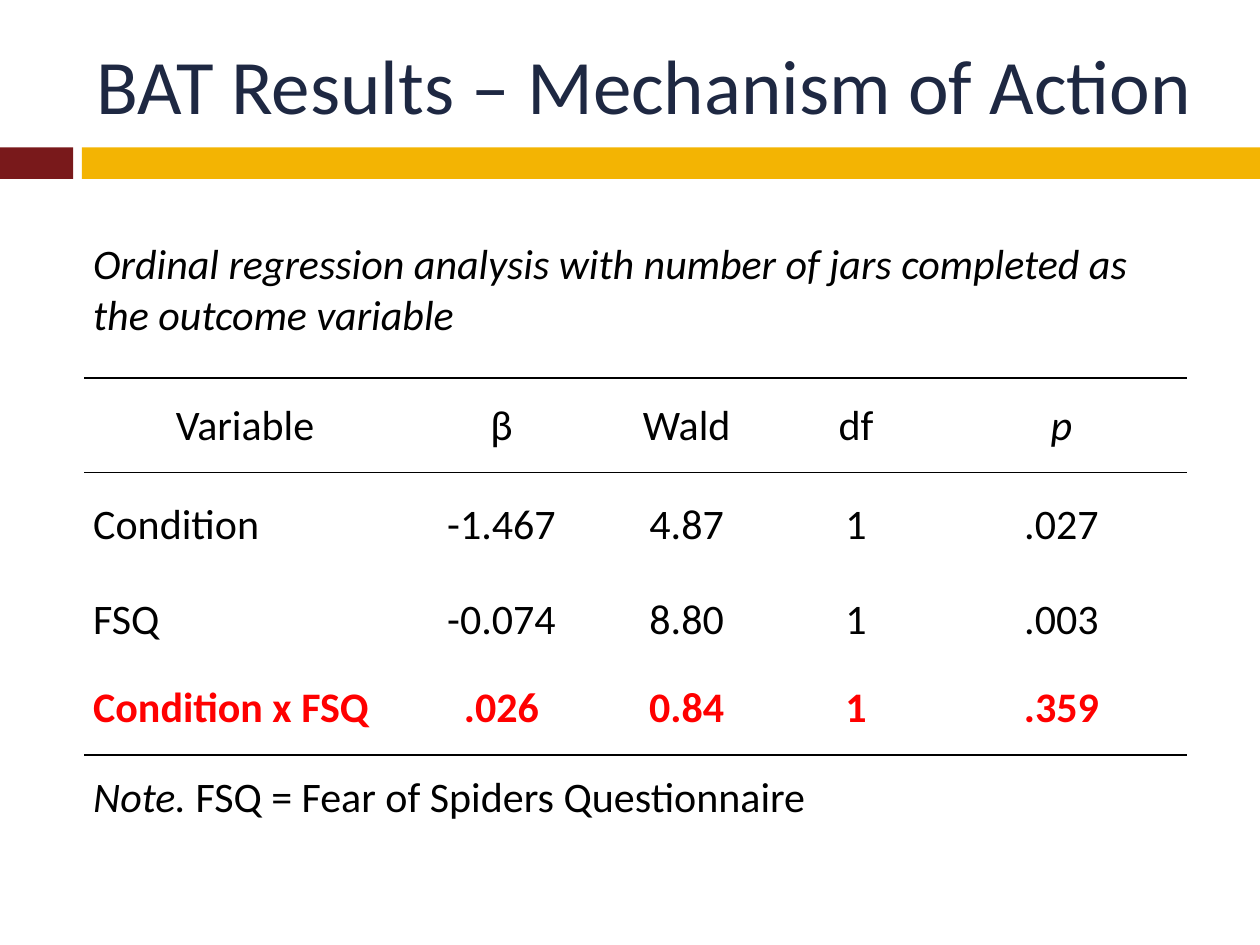
from lxml import etree
from pptx import Presentation
from pptx.dml.color import RGBColor
from pptx.enum.shapes import MSO_SHAPE
from pptx.enum.text import MSO_ANCHOR, PP_ALIGN
from pptx.oxml.ns import qn
from pptx.util import Inches, Pt

RECTANGLE = MSO_SHAPE.RECTANGLE
TOP, MIDDLE, BOTTOM = MSO_ANCHOR.TOP, MSO_ANCHOR.MIDDLE, MSO_ANCHOR.BOTTOM
LEFT, CENTER = PP_ALIGN.LEFT, PP_ALIGN.CENTER

NAVY = RGBColor(0x1E, 0x28, 0x42)
MAROON = RGBColor(0x79, 0x19, 0x1B)
GOLD = RGBColor(0xF3, 0xB4, 0x03)
BLACK = RGBColor(0, 0, 0)
RED = RGBColor(0xFF, 0, 0)
FONT = "Calibri"

COLUMNS = [2.55, 1.52, 1.42, 1.27, 1.99]
ROWS = [1.11, 0.75, 0.83, 0.67, 0.74, 0.55]
CAPTION_ROW, HEADER_ROW, RESULT_ROW, NOTE_ROW = 0, 1, 4, 5
RULES = {1: 1.25, 2: 0.75, 5: 1.25}  # line weight above each ruled row
MARGIN = 0.67

CONTENT = [
    ["Ordinal regression analysis with number of jars completed as the outcome variable"],
    ["Variable", "β", "Wald", "df", "p"],
    ["Condition", "-1.467", "4.87", "1", ".027"],
    ["FSQ", "-0.074", "8.80", "1", ".003"],
    ["Condition x FSQ", ".026", "0.84", "1", ".359"],
    ["Note. "],
]


def add_border(cell, side, weight):
    """Draw one cell edge in black, or leave it clear when weight is None."""
    line = etree.SubElement(cell._tc.get_or_add_tcPr(), qn(f"a:ln{side}"))
    if weight is None:
        etree.SubElement(line, qn("a:noFill"))
        return
    line.set("w", str(Pt(weight)))
    fill = etree.SubElement(line, qn("a:solidFill"))
    etree.SubElement(fill, qn("a:srgbClr")).set("val", str(BLACK))


prs = Presentation()
prs.slide_width, prs.slide_height = Inches(10), Inches(7.5)
slide = prs.slides.add_slide(prs.slide_layouts[6])

# Two-colour band under the title
for left, width, color in [(0, 0.58, MAROON), (0.65, 9.35, GOLD)]:
    band = slide.shapes.add_shape(
        RECTANGLE, Inches(left), Inches(1.17), Inches(width), Inches(0.25))
    band.shadow.inherit = False
    band.fill.solid()
    band.fill.fore_color.rgb = color
    band.line.fill.background()

# Title
title = slide.shapes.add_textbox(
    Inches(MARGIN), Inches(0.25), Inches(8.92), Inches(0.83)).text_frame
title.word_wrap = True
title.vertical_anchor = MIDDLE
heading = title.paragraphs[0]
heading.text = "BAT Results – Mechanism of Action"
heading.font.name, heading.font.size = FONT, Pt(44)
heading.font.color.rgb = NAVY

# Regression table without a banded style
table = slide.shapes.add_table(
    len(ROWS), len(COLUMNS), Inches(MARGIN), Inches(1.89),
    Inches(sum(COLUMNS)), Inches(sum(ROWS))).table
table.first_row = table.horz_banding = False
table._tbl.tblPr.find(qn("a:tableStyleId")).text = "{2D5ABB26-0587-4C30-8999-92F81FD0307C}"
for column, width in zip(table.columns, COLUMNS):
    column.width = Inches(width)
for row, height in zip(table.rows, ROWS):
    row.height = Inches(height)
for r in (CAPTION_ROW, NOTE_ROW):
    table.cell(r, 0).merge(table.cell(r, len(COLUMNS) - 1))

# Horizontal rules, margins and clear fills
for r in range(len(ROWS)):
    for c in range(len(COLUMNS)):
        cell = table.cell(r, c)
        for side, weight in [("L", None), ("R", None),
                             ("T", RULES.get(r)), ("B", RULES.get(r + 1))]:
            add_border(cell, side, weight)
        cell.fill.background()
        cell.margin_left = cell.margin_right = Inches(0.07)
        cell.margin_top, cell.margin_bottom = Inches(0.01), 0
        cell.vertical_anchor = {CAPTION_ROW: TOP, NOTE_ROW: BOTTOM}.get(r, MIDDLE)

# Cell text
for r, entries in enumerate(CONTENT):
    for c, entry in enumerate(entries):
        paragraph = table.cell(r, c).text_frame.paragraphs[0]
        paragraph.text = entry
        paragraph.alignment = CENTER if c or r == HEADER_ROW else LEFT
        font = paragraph.font
        font.name, font.size = FONT, Pt(24)
        font.bold = r == RESULT_ROW
        font.italic = r == CAPTION_ROW or entry == "p"
        font.color.rgb = RED if r == RESULT_ROW else BLACK

# The note opens in italics and goes on upright
note = table.cell(NOTE_ROW, 0).text_frame.paragraphs[0]
note.runs[0].font.italic = True
note.add_run().text = "FSQ = Fear of Spiders Questionnaire"

prs.save("out.pptx")
